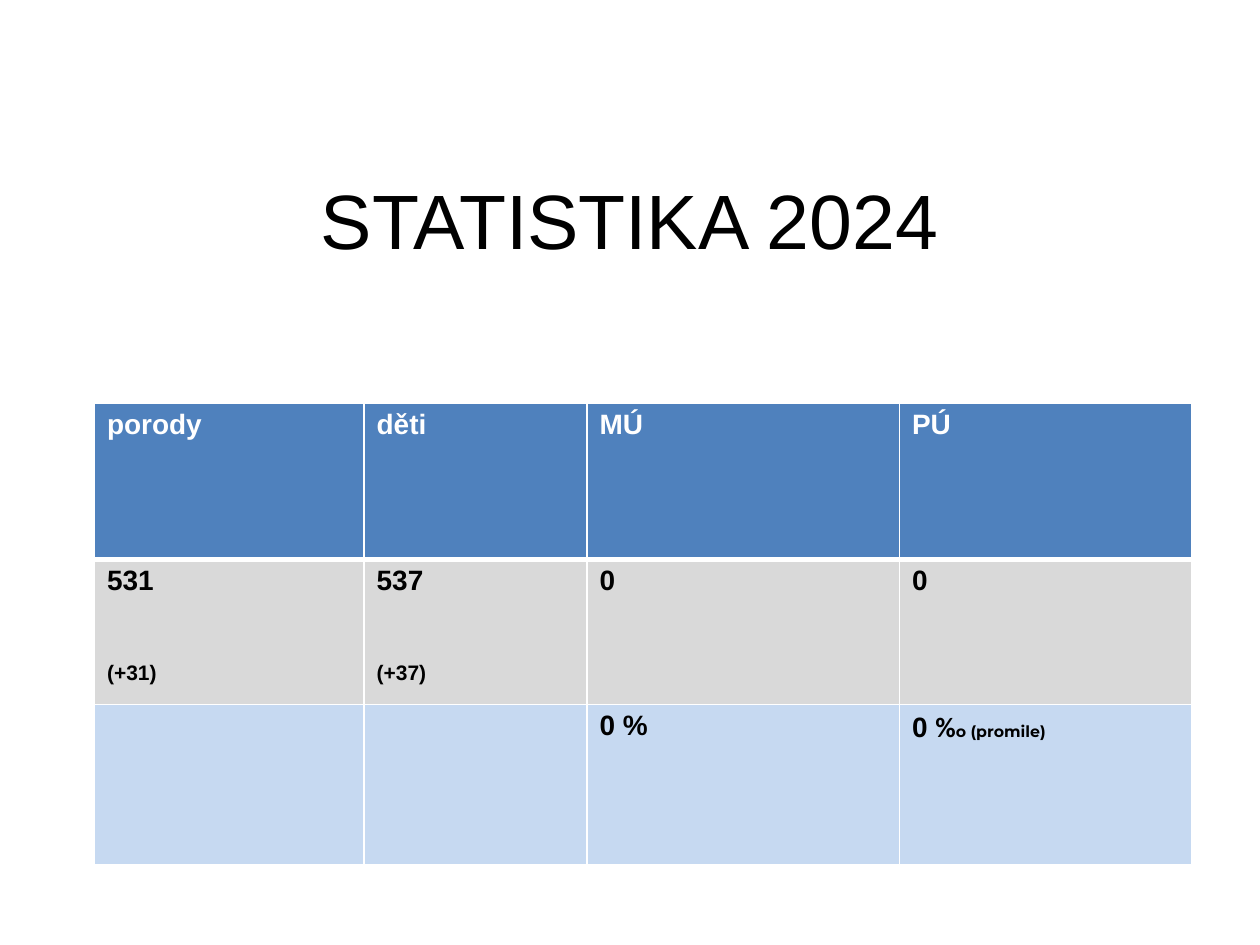
import pptx
import pptx.dml.color
import pptx.enum.text
import pptx.oxml
import pptx.oxml.ns
import pptx.util

Inches = pptx.util.Inches
Pt = pptx.util.Pt
RGB = pptx.dml.color.RGBColor.from_string

TITLE = "STATISTIKA 2024"
ROWS = [
    [[[("porody", "head")]], [[("děti", "head")]], [[("MÚ", "head")]], [[("PÚ", "head")]]],
    [[[("531", "body")], [("(+31)", "diff")]],
     [[("537", "body")], [("(+37)", "diff")]],
     [[("0", "body")]], [[("0", "body")]]],
    [[], [], [[("0 %", "body")]],
     [[("0 ", "body"), ("%", "sign"), ("o (promile)", "note")]]],
]
COLS = [2.14, 1.77, 2.48, 2.32]
HIGHS = [1.24, 1.15, 1.27]

THEME = {
    "fills": ["4F81BD", "D9D9D9", "C6D9F1"],
    "line": "FFFFFF",
    "thin": 0.96,
    "thick": 3,
    "gap": 36.8,
    "fonts": {
        "title": {"name": "Arial", "size": Pt(44), "bold": False, "color": "000000"},
        "head": {"name": "Arial", "size": Pt(16), "bold": True, "color": "FFFFFF"},
        "body": {"name": "Arial", "size": Pt(16), "bold": True, "color": "000000"},
        "diff": {"name": "Arial", "size": Pt(12), "bold": True, "color": "000000"},
        "sign": {"name": "Calibri", "size": Pt(16), "bold": True, "color": "000000"},
        "note": {"name": "Montserrat", "size": Pt(9), "bold": True, "color": "000000"},
    },
}


def put(obj, vals):
    for key, val in vals.items():
        setattr(obj, key, val)


def style(font, kind):
    vals = dict(THEME["fonts"][kind])
    font.color.rgb = RGB(vals.pop("color"))
    put(font, vals)


def edge(cell, row):
    props = cell._tc.get_or_add_tcPr()
    wide = {"T": row == 1, "B": row == 0}
    for spot, side in enumerate("LRTB"):
        width = Pt(THEME["thick" if wide.get(side) else "thin"])
        props.insert(spot, pptx.oxml.parse_xml(
            f'<a:ln{side} {pptx.oxml.ns.nsdecls("a")} w="{width}"><a:solidFill>'
            f'<a:srgbClr val="{THEME["line"]}"/></a:solidFill></a:ln{side}>'))


def write(cell, paras):
    frame = cell.text_frame
    for num, runs in enumerate(paras):
        para = frame.add_paragraph() if num else frame.paragraphs[0]
        if num:
            para.space_before = Pt(THEME["gap"])
        for text, kind in runs:
            run = para.add_run()
            run.text = text
            style(run.font, kind)


def main():
    deck = pptx.Presentation()
    put(deck, {"slide_width": Inches(10), "slide_height": Inches(7.5)})
    slide = deck.slides.add_slide(deck.slide_layouts[5])

    title = slide.shapes.title
    put(title, {"left": Inches(0.75), "top": Inches(0.21),
                "width": Inches(8.5), "height": Inches(3.73)})
    frame = title.text_frame
    frame.text = TITLE
    put(frame, {"margin_left": 0, "margin_right": 0, "margin_top": 0,
                "margin_bottom": Inches(0.68), "word_wrap": True,
                "vertical_anchor": pptx.enum.text.MSO_ANCHOR.MIDDLE})
    para = frame.paragraphs[0]
    para.alignment = pptx.enum.text.PP_ALIGN.CENTER
    style(para.runs[0].font, "title")

    table = slide.shapes.add_table(
        len(ROWS), len(COLS), Inches(0.75), Inches(3.2),
        Inches(sum(COLS)), Inches(sum(HIGHS))).table
    table.horz_banding = False
    for col, width in zip(table.columns, COLS):
        col.width = Inches(width)
    for row, cells in enumerate(ROWS):
        table.rows[row].height = Inches(HIGHS[row])
        for col, paras in enumerate(cells):
            cell = table.cell(row, col)
            cell.fill.solid()
            cell.fill.fore_color.rgb = RGB(THEME["fills"][row])
            edge(cell, row)
            write(cell, paras)

    deck.save("out.pptx")


if __name__ == "__main__":
    main()
